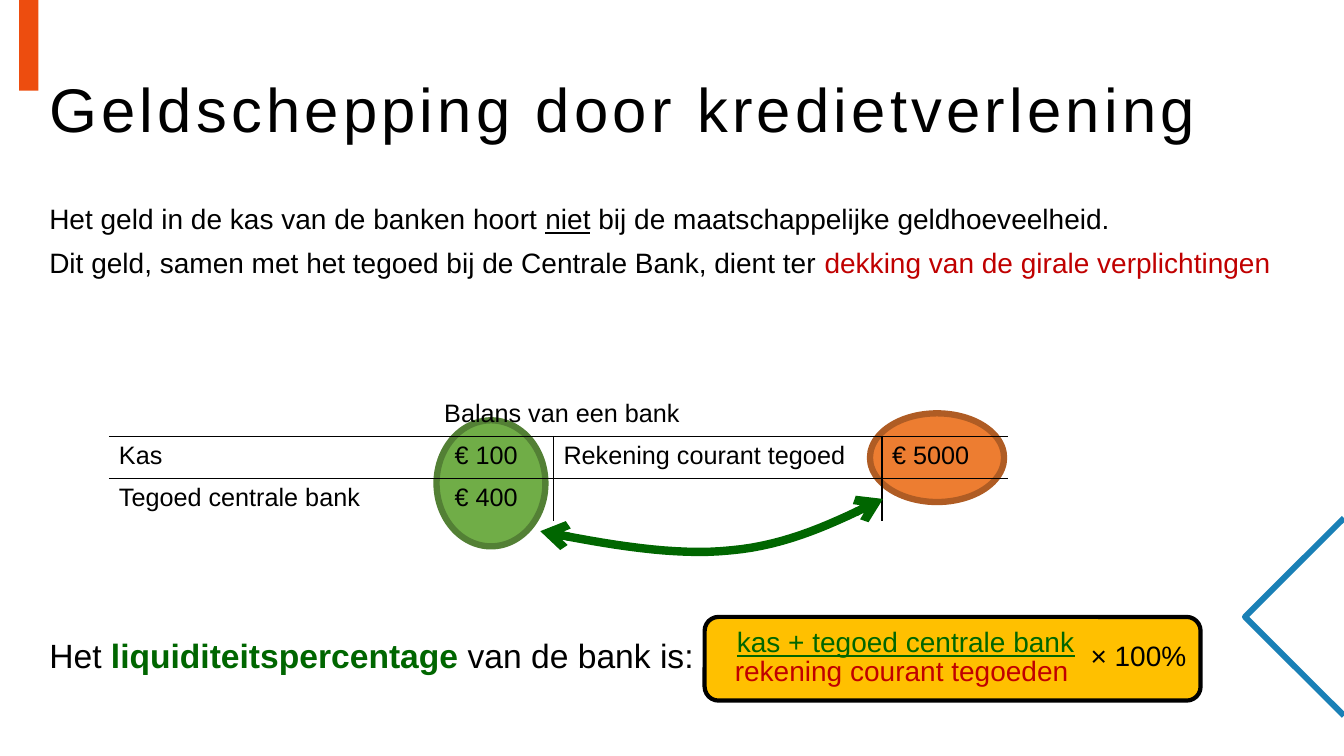
"""Builds a slide on money creation, with a bank balance sheet and the liquidity ratio."""
from lxml.etree import SubElement
from pptx import Presentation
from pptx.dml.color import RGBColor
from pptx.enum.shapes import MSO_SHAPE
from pptx.enum.text import MSO_ANCHOR, PP_ALIGN
from pptx.oxml.ns import qn
from pptx.util import Inches, Pt

C = {"black": "000000", "bar": "ED4D0F", "blue": "1A80B6", "gold": "FFC000",
     "orange": "ED7D31", "rust": "AF5C24", "lime": "70AD47", "moss": "538035",
     "green": "006600", "red": "C00000"}
C = {name: RGBColor.from_string(value) for name, value in C.items()}

prs = Presentation()
prs.slide_width, prs.slide_height = Inches(13.33), Inches(7.5)
W, H = prs.slide_width, prs.slide_height
s = prs.slides.add_slide(prs.slide_layouts[6])


def share(*percents):
    return [int(v * (H if i % 2 else W) / 100) for i, v in enumerate(percents)]


def write(tf, *lines, size=20, spacing=None, before=0, tracking=0,
          align=PP_ALIGN.LEFT, anchor=MSO_ANCHOR.TOP):
    tf.word_wrap, tf.vertical_anchor = True, anchor
    for i, runs in enumerate(lines):
        p = tf.paragraphs[0] if i == 0 else tf.add_paragraph()
        p.alignment, p.line_spacing = align, spacing
        p.space_before = Pt(before if i else 0)
        for words, color, style in runs:
            r = p.add_run()
            r.text = words
            r.font.name, r.font.size, r.font.color.rgb = "Arial", Pt(size), C[color]
            r.font.bold, r.font.underline = style == "bold", style == "underline"
            if tracking:
                r._r.get_or_add_rPr().set("spc", str(tracking * 100))


for kind, area, fill, line, width in [
    (MSO_SHAPE.RECTANGLE, (1.43, 0, 1.43, 12), "bar", None, 0),
    (MSO_SHAPE.ROUNDED_RECTANGLE, (52.43, 81.6, 36.9, 11.07), "gold", "black", 3),
    (MSO_SHAPE.OVAL, (64.73, 54.67, 9.98, 11.73), "orange", "rust", 4.5),
    (MSO_SHAPE.OVAL, (32.48, 55.6, 8.1, 16.67), "lime", "moss", 4.5),
]:
    sp = s.shapes.add_shape(kind, *share(*area))
    sp.shadow.inherit = False
    sp.fill.solid()
    sp.fill.fore_color.rgb = C[fill]
    if line:
        sp.line.color.rgb, sp.line.width = C[line], Pt(width)
    else:
        sp.line.fill.background()

for area, lines, form in [
    ((2.93, 5.2, 94.6, 19.33),
     [[("Geldschepping door kredietverlening", "black", None)]],
     dict(size=44, spacing=0.9, tracking=3, anchor=MSO_ANCHOR.MIDDLE)),
    ((2.93, 26.53, 94.6, 14),
     [[("Het geld in de kas van de banken hoort ", "black", None),
       ("niet", "black", "underline"),
       (" bij de maatschappelijke geldhoeveelheid.", "black", None)],
      [("Dit geld, samen met het tegoed bij de Centrale Bank, dient ter ", "black", None),
       ("dekking van de girale verplichtingen", "red", None)]],
     dict(spacing=0.9, before=10)),
    ((2.93, 83.33, 56.25, 6.67),
     [[("Het ", "black", None), ("liquiditeitspercentage ", "green", "bold"),
       ("van de bank is:", "black", None)]], dict(size=24)),
    ((53.93, 85.73, 27.83, 5.87), [[("rekening courant tegoeden", "red", None)]], {}),
    ((54.08, 82, 27.15, 5.87), [[("kas + tegoed centrale bank", "green", "underline")]], {}),
    ((80.4, 83.87, 9, 5.87), [[("× 100%", "black", None)]], {}),
]:
    write(s.shapes.add_textbox(*share(*area)).text_frame, *lines, **form)

balance = [[" Balans van een bank", "", "", ""],
           ["Kas", "€ 100", "Rekening courant tegoed", "€ 5000"],
           ["Tegoed centrale bank", "€ 400", "", ""]]
tb = s.shapes.add_table(3, 4, *share(8.1, 52.13, 66.9, 16.8)).table
tb.first_row = tb.horz_banding = False
tb._tbl.tblPr.find(qn("a:tableStyleId")).text = "{2D5ABB26-0587-4C30-8999-92F81FD0307C}"
for col, width in zip(tb.columns, (24.98, 8.1, 24.45, 9.38)):
    col.width = share(width)[0]
tb.cell(0, 0).merge(tb.cell(0, 3))
for i, row in enumerate(balance):
    for j, words in enumerate(row):
        cell = tb.cell(i, j)
        if words:
            write(cell.text_frame, [(words, "black", None)], size=18,
                  align=PP_ALIGN.LEFT if i else PP_ALIGN.CENTER)
        sides = {"a:lnL": i > 0 and j > 1, "a:lnR": i > 0 and j in (1, 2),
                 "a:lnT": i > 0, "a:lnB": i < 2}
        for tag in [tag for tag, shown in sides.items() if shown]:
            ln = SubElement(cell._tc.get_or_add_tcPr(), qn(tag), w=str(Pt(1)))
            SubElement(SubElement(ln, qn("a:solidFill")), qn("a:srgbClr"), val=str(C["black"]))
        cell.fill.background()

chevron = [(100, 68.53), (92.63, 81.6), (100, 94.67)]
bends = [[(40.2, 70.27), (45.15, 72), (50.18, 73.6), (54.38, 72.8)],
         [(54.38, 72.8), (58.65, 72.13), (62.18, 69.07), (65.7, 66)]]
steps = 16
curve = [bends[0][0]]
for bend in bends:
    for t in [k / steps for k in range(1, steps + 1)]:
        weights = ((1 - t) ** 3, 3 * t * (1 - t) ** 2, 3 * t * t * (1 - t), t ** 3)
        curve.append([sum(w * v for w, v in zip(weights, axis)) for axis in zip(*bend)])

for points, color, width, arrows in [(chevron, "blue", 4.25, ()),
                                     (curve, "green", 6, ("a:headEnd", "a:tailEnd"))]:
    points = [share(*point) for point in points]
    fb = s.shapes.build_freeform(*points[0])
    fb.add_line_segments(points[1:], close=False)
    sp = fb.convert_to_shape()
    sp.shadow.inherit = False
    sp.fill.background()
    sp.line.color.rgb, sp.line.width = C[color], Pt(width)
    for tag in arrows:
        SubElement(sp.line._get_or_add_ln(), qn(tag), type="arrow")

prs.save("out.pptx")
